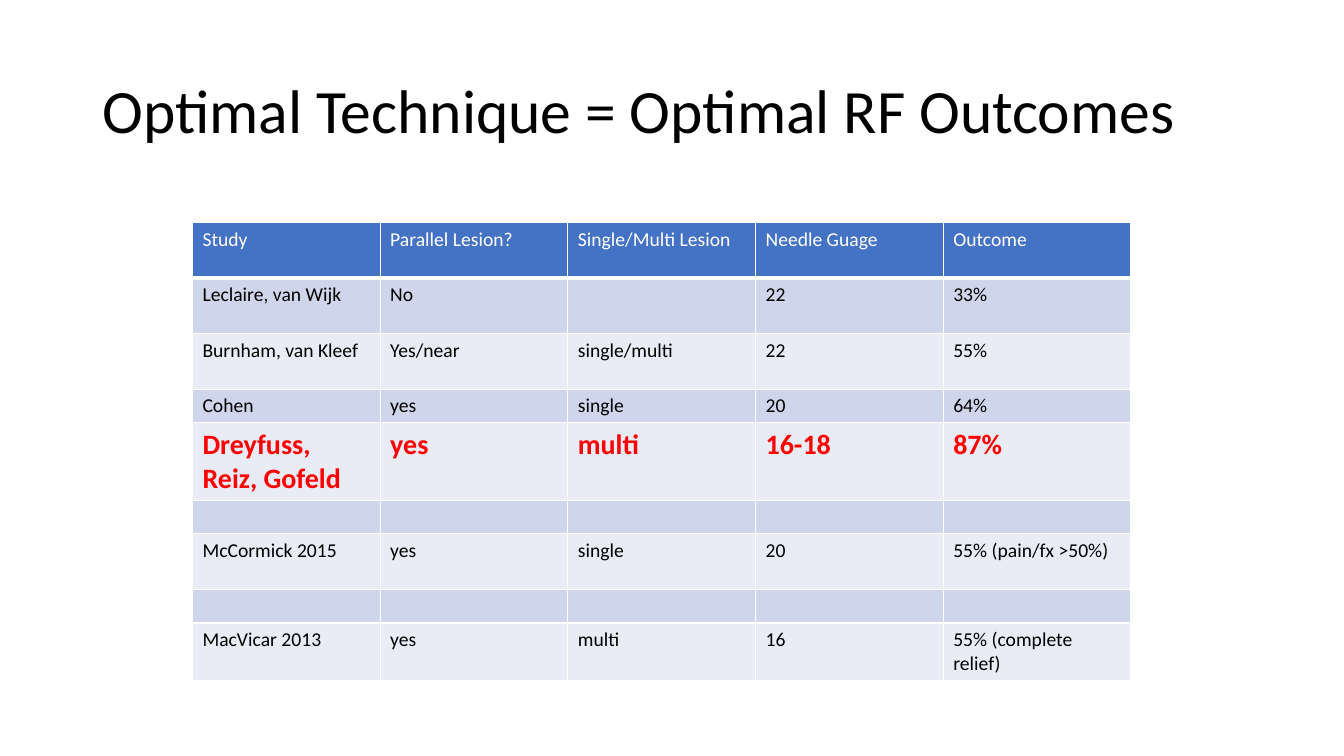
from lxml.etree import SubElement
from pptx import Presentation
from pptx.dml.color import RGBColor
from pptx.enum.text import MSO_ANCHOR
from pptx.oxml.ns import qn
from pptx.util import Cm, Pt

# Content
TITLE = "Optimal Technique = Optimal RF Outcomes"
HEADER = ("Study", "Parallel Lesion?", "Single/Multi Lesion", "Needle Guage", "Outcome")
EMPTY = ("",) * len(HEADER)
STUDIES = [
    ("Leclaire, van Wijk", "No", "", "22", "33%"),
    ("Burnham, van Kleef", "Yes/near", "single/multi", "22", "55%"),
    ("Cohen", "yes", "single", "20", "64%"),
    ("Dreyfuss, Reiz, Gofeld", "yes", "multi", "16-18", "87%"),
    EMPTY,
    ("McCormick 2015", "yes", "single", "20", "55% (pain/fx >50%)"),
    EMPTY,
    ("MacVicar 2013", "yes", "multi", "16", "55% (complete relief)"),
]
ROWS = [HEADER] + STUDIES
BEST_ROW = 4
SHORT_ROWS = (3, 5, 7)

# Style
FONT = "Calibri"
BLACK = RGBColor(0x00, 0x00, 0x00)
WHITE = RGBColor(0xFF, 0xFF, 0xFF)
RED = RGBColor(0xFF, 0x00, 0x00)
BLUE = RGBColor(0x44, 0x72, 0xC4)
BANDS = (RGBColor(0xE9, 0xEB, 0xF5), RGBColor(0xCF, 0xD5, 0xEA))

# Layout
TABLE_LEFT, TABLE_TOP = Cm(4.85), Cm(5.61)
COL_W = Cm(4.73)
ROW_H, SHORT_H = Cm(1.4), Cm(0.79)


def write(tf, text, size=14, color=BLACK, bold=False, spacing=None):
    p = tf.paragraphs[0]
    if spacing:
        p.line_spacing = spacing
    if not text:
        # An empty cell still needs its text size to keep the row low
        SubElement(p._p, qn("a:endParaRPr"), sz=str(size * 100))
        return
    r = p.add_run()
    r.text = text
    r.font.name = FONT
    r.font.size = Pt(size)
    r.font.bold = bold
    r.font.color.rgb = color


def add_borders(cell, bottom=1, top=1):
    tc_pr = cell._tc.get_or_add_tcPr()
    for side, width in (("L", 1), ("R", 1), ("T", top), ("B", bottom)):
        ln = SubElement(tc_pr, qn(f"a:ln{side}"), w=str(Pt(width)))
        fill = SubElement(ln, qn("a:solidFill"))
        SubElement(fill, qn("a:srgbClr"), val=str(WHITE))


prs = Presentation()
prs.slide_width, prs.slide_height = Cm(33.87), Cm(19.05)
s = prs.slides.add_slide(prs.slide_layouts[6])

# Title
tf = s.shapes.add_textbox(Cm(2.33), Cm(1.01), Cm(29.21), Cm(3.68)).text_frame
tf.word_wrap = True
tf.vertical_anchor = MSO_ANCHOR.MIDDLE
write(tf, TITLE, size=44, spacing=0.9)

# Table of studies
heights = [SHORT_H if i in SHORT_ROWS else ROW_H for i in range(len(ROWS))]
table = s.shapes.add_table(len(ROWS), len(HEADER), TABLE_LEFT, TABLE_TOP,
                           COL_W * len(HEADER), sum(heights)).table
for col in table.columns:
    col.width = COL_W
for i, (row, height) in enumerate(zip(ROWS, heights)):
    table.rows[i].height = height
    if i == 0:
        style = dict(color=WHITE)
    elif i == BEST_ROW:
        style = dict(size=20, color=RED, bold=True)
    else:
        style = {}
    for j, text in enumerate(row):
        cell = table.cell(i, j)
        add_borders(cell, bottom=3 if i == 0 else 1, top=3 if i == 1 else 1)
        cell.fill.solid()
        cell.fill.fore_color.rgb = BANDS[i % 2] if i else BLUE
        write(cell.text_frame, text, **style)

prs.save("out.pptx")
